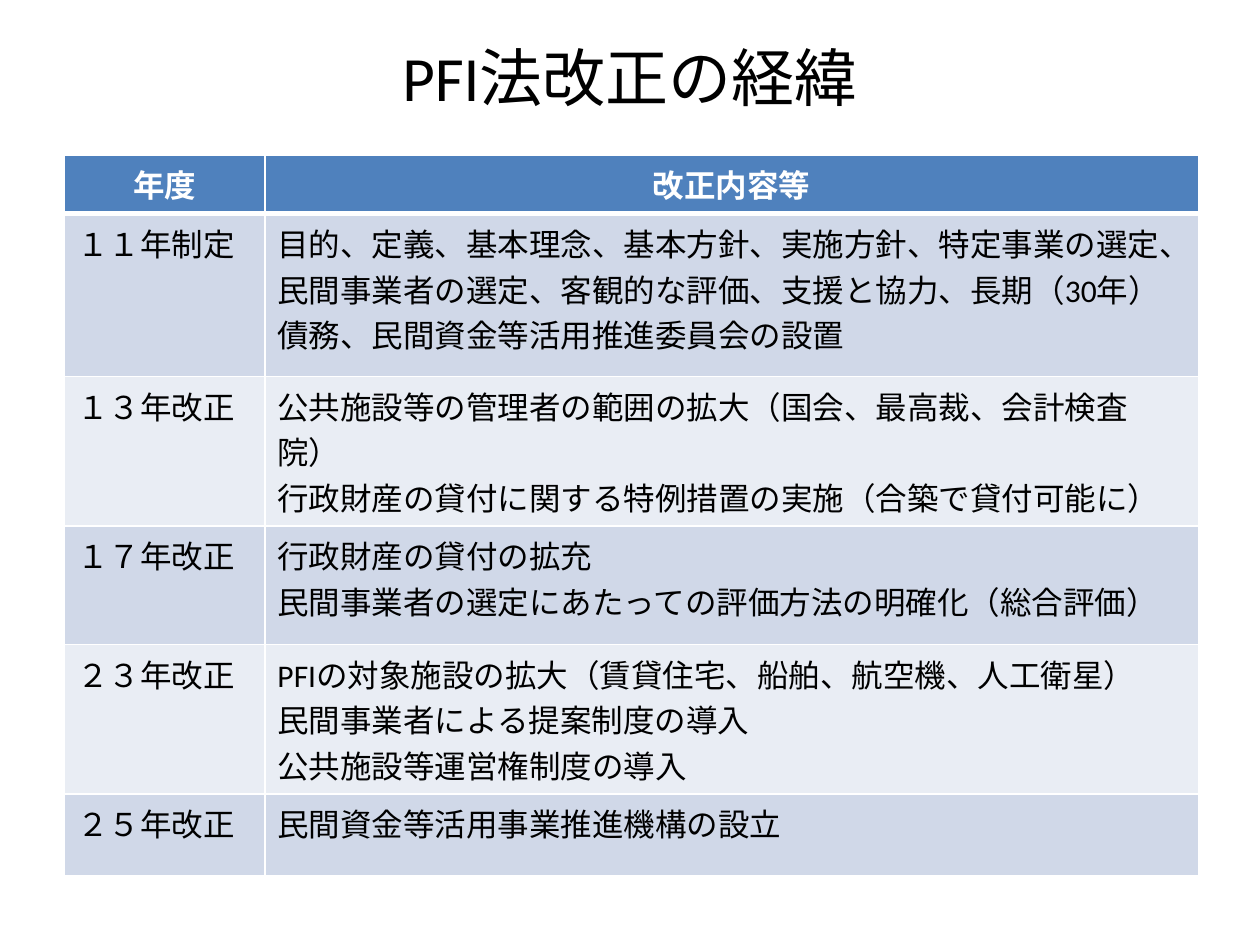
from lxml import etree
from pptx import Presentation
from pptx.dml.color import RGBColor
from pptx.enum.lang import MSO_LANGUAGE_ID
from pptx.enum.text import MSO_ANCHOR, PP_ALIGN
from pptx.oxml.ns import qn
from pptx.util import Cm, Pt

TITLE = "PFI法改正の経緯"
HEADER = ("年度", ["改正内容等"])
REVISIONS = [
    ("１１年制定", ["目的、定義、基本理念、基本方針、実施方針、特定事業の選定、",
                "民間事業者の選定、客観的な評価、支援と協力、長期（30年）債務、"
                "民間資金等活用推進委員会の設置"]),
    ("１３年改正", ["公共施設等の管理者の範囲の拡大（国会、最高裁、会計検査院）",
                "行政財産の貸付に関する特例措置の実施（合築で貸付可能に）"]),
    ("１７年改正", ["行政財産の貸付の拡充",
                "民間事業者の選定にあたっての評価方法の明確化（総合評価）"]),
    ("２３年改正", ["PFIの対象施設の拡大（賃貸住宅、船舶、航空機、人工衛星）",
                "民間事業者による提案制度の導入",
                "公共施設等運営権制度の導入"]),
    ("２５年改正", ["民間資金等活用事業推進機構の設立"]),
]
COL_WIDTHS = [4.04, 18.82]
ROW_HEIGHTS = [1.19, 3.28, 2.39, 2.39, 3.0, 1.65]
BANDS = ["D0D8E8", "E9EDF4"]
BASE = {"name": "Calibri", "language_id": MSO_LANGUAGE_ID.JAPANESE}
TITLE_FONT = {**BASE, "size": Pt(36), "bold": False}
HEAD_FONT = {**BASE, "size": Pt(18), "bold": True}
BODY_FONT = {**HEAD_FONT, "bold": False}


def rgb(value):
    return RGBColor.from_string(value)


def write(tf, lines, font, color, align):
    for i, line in enumerate(lines):
        p = tf.paragraphs[0] if i == 0 else tf.add_paragraph()
        p.alignment = align
        r = p.add_run()
        r.text = line
        for name, value in font.items():
            setattr(r.font, name, value)
        r.font.color.rgb = rgb(color)


def set_borders(cell, widths, color):
    """Cell edges go before the fill, in the order left, right, top, bottom."""
    tcPr = cell._tc.get_or_add_tcPr()
    for i, (edge, width) in enumerate(widths.items()):
        ln = etree.Element(qn(f"a:ln{edge}"), w=str(Pt(width)))
        fill = etree.SubElement(ln, qn("a:solidFill"))
        etree.SubElement(fill, qn("a:srgbClr"), val=color)
        tcPr.insert(i, ln)


def add_title(s, left, top, width, height):
    sp = s.shapes.title
    sp.left, sp.top, sp.width, sp.height = left, top, width, height
    sp.text_frame.vertical_anchor = MSO_ANCHOR.MIDDLE
    write(sp.text_frame, [TITLE], TITLE_FONT, "000000", PP_ALIGN.CENTER)


def add_revision_table(s, left, top, width, height):
    rows = [HEADER] + REVISIONS
    frame = s.shapes.add_table(len(rows), 2, left, top, width, height)
    table = frame.table
    for col, w in zip(table.columns, COL_WIDTHS):
        col.width = Cm(w)
    for row, h in zip(table.rows, ROW_HEIGHTS):
        row.height = Cm(h)
    frame.height = height

    for i, (year, changes) in enumerate(rows):
        head = i == 0
        for cell, lines in zip(table.rows[i].cells, ([year], changes)):
            cell.fill.solid()
            cell.fill.fore_color.rgb = rgb("4F81BD" if head else BANDS[(i - 1) % 2])
            # The rule under the header is heavier
            set_borders(cell, {"L": 1, "R": 1, "T": 3 if i == 1 else 1,
                               "B": 3 if head else 1}, "FFFFFF")
            if head:
                write(cell.text_frame, lines, HEAD_FONT, "FFFFFF", PP_ALIGN.CENTER)
            else:
                write(cell.text_frame, lines, BODY_FONT, "000000", PP_ALIGN.LEFT)


def main():
    prs = Presentation()
    prs.slide_width, prs.slide_height = Cm(25.4), Cm(19.05)
    s = prs.slides.add_slide(prs.slide_layouts[5])
    add_title(s, Cm(1.27), Cm(0.76), Cm(22.86), Cm(1.55))
    add_revision_table(s, Cm(1.3), Cm(3.12), Cm(22.86), Cm(14.05))
    prs.save("out.pptx")


if __name__ == "__main__":
    main()
